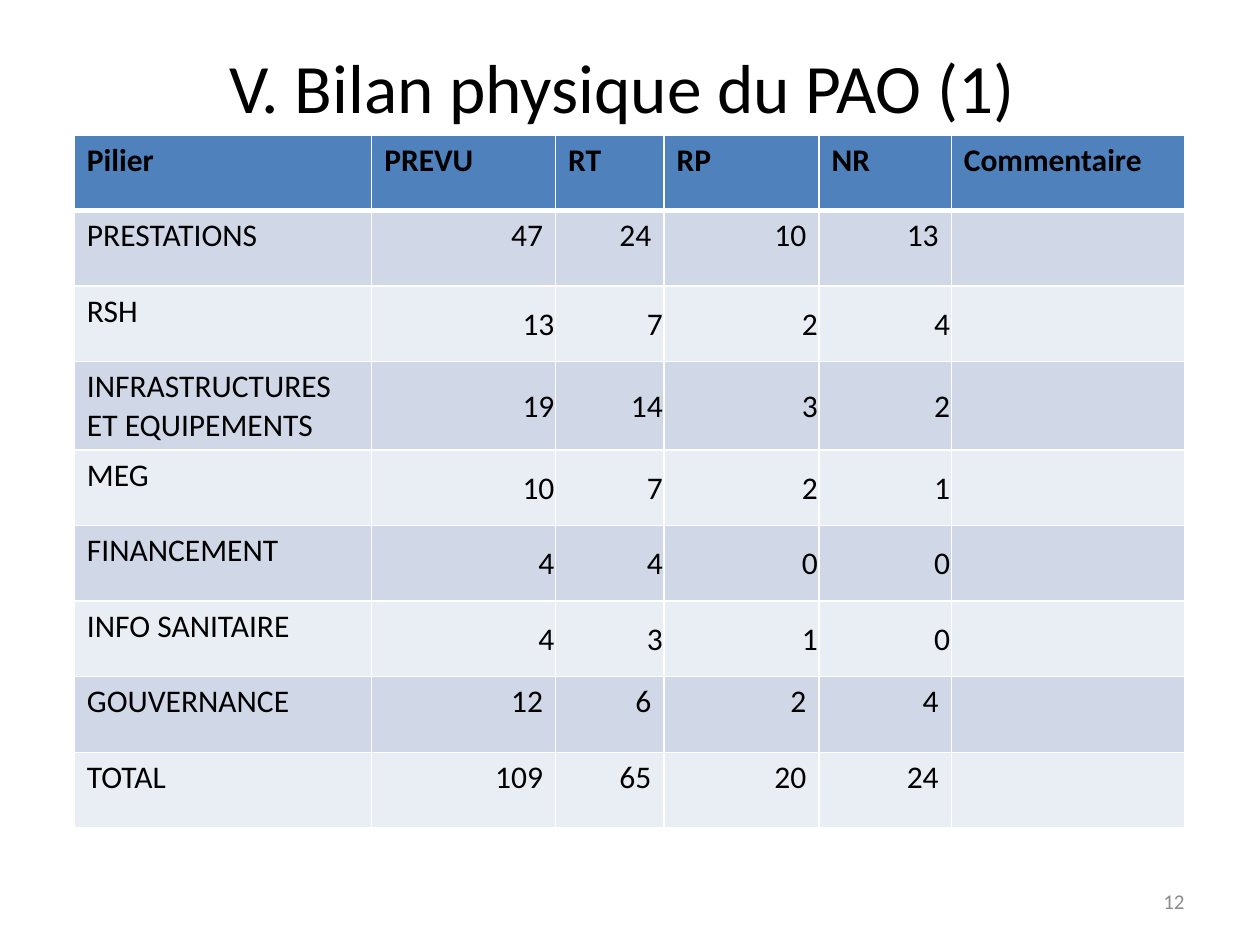
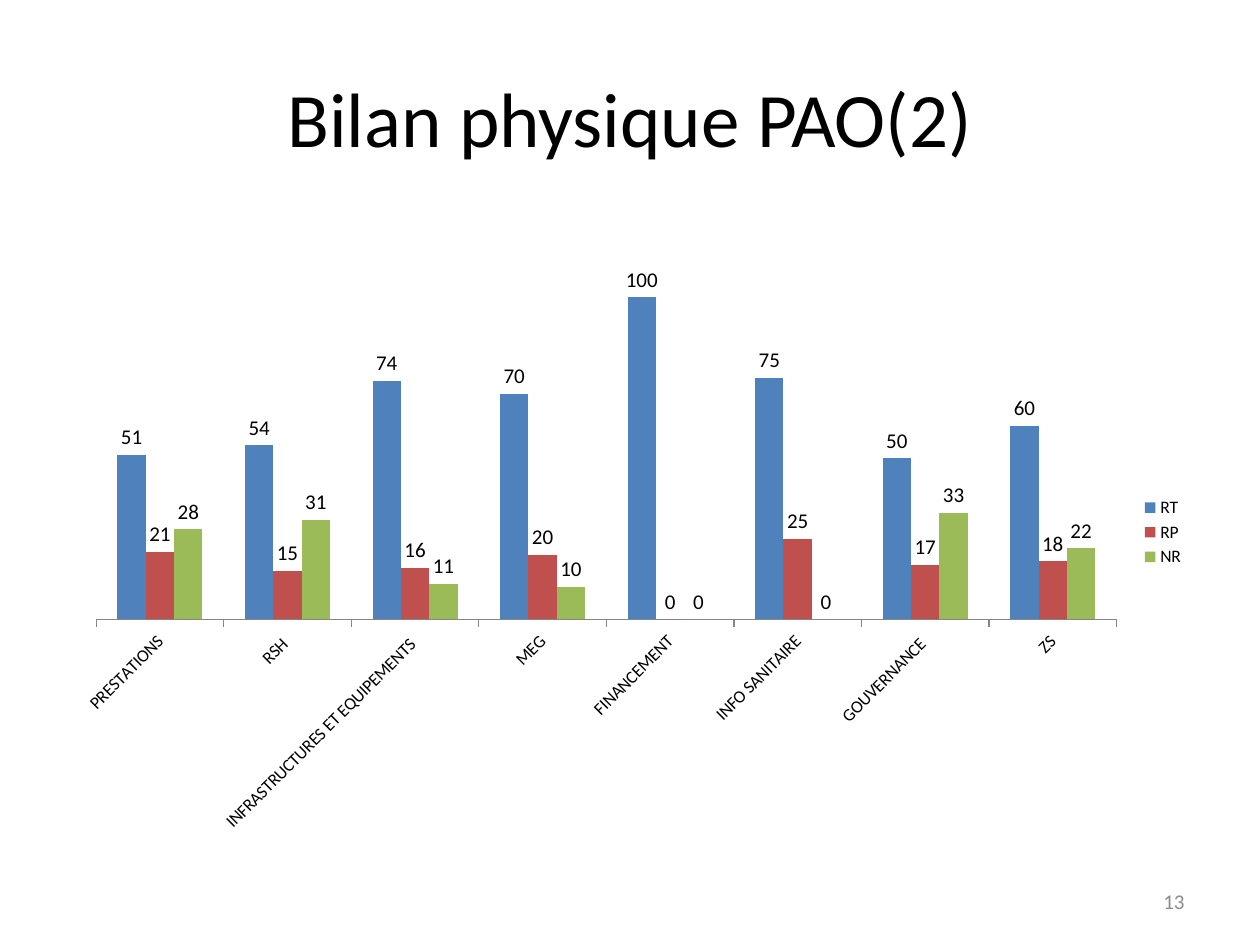
from dataclasses import dataclass

from lxml import etree
from pptx import Presentation
from pptx.chart.data import CategoryChartData
from pptx.dml.color import RGBColor
from pptx.enum.chart import (XL_CHART_TYPE, XL_LABEL_POSITION, XL_LEGEND_POSITION,
                             XL_TICK_MARK)
from pptx.enum.text import MSO_ANCHOR, PP_ALIGN
from pptx.oxml.ns import qn
from pptx.util import Inches, Pt

LEFT, CENTER, RIGHT = PP_ALIGN.LEFT, PP_ALIGN.CENTER, PP_ALIGN.RIGHT
TOP, MIDDLE = MSO_ANCHOR.TOP, MSO_ANCHOR.MIDDLE
COLUMNS = XL_CHART_TYPE.COLUMN_CLUSTERED
LABEL_ABOVE = XL_LABEL_POSITION.OUTSIDE_END
LEGEND_RIGHT = XL_LEGEND_POSITION.RIGHT
TICK_OUT = XL_TICK_MARK.OUTSIDE

FONT = "Calibri"
COLORS = {
    "text": "000000", "white": "FFFFFF", "number": "8C8C8C", "axis": "868686",
    "header": "4F81BD", "band_dark": "D0D8E8", "band_light": "E9EDF4",
    "RT": "4F81BD", "RP": "C0504D", "NR": "9BBB59",
}


@dataclass
class Pillar:
    name: str
    counts: tuple[int, int, int, int]
    tight: bool = True  # numbers set mid-height, close to the cell edge


@dataclass
class Series:
    name: str
    values: tuple[int, ...]


HEADERS = ("Pilier", "PREVU", "RT", "RP", "NR", "Commentaire")
COL_WIDTHS = (2.36, 1.46, 0.86, 1.23, 1.05, 1.85)
ROW_HEIGHT = 0.6
PILLARS = (
    Pillar("PRESTATIONS", (47, 24, 10, 13), tight=False),
    Pillar("RSH", (13, 7, 2, 4)),
    Pillar("INFRASTRUCTURES ET EQUIPEMENTS", (19, 14, 3, 2)),
    Pillar("MEG", (10, 7, 2, 1)),
    Pillar("FINANCEMENT", (4, 4, 0, 0)),
    Pillar("INFO SANITAIRE", (4, 3, 1, 0)),
    Pillar("GOUVERNANCE", (12, 6, 2, 4), tight=False),
    Pillar("TOTAL", (109, 65, 20, 24), tight=False),
)

CATEGORIES = ("PRESTATIONS", "RSH ", "INFRASTRUCTURES ET EQUIPEMENTS ", "MEG",
              "FINANCEMENT", "INFO SANITAIRE", "GOUVERNANCE ", "ZS")
SERIES = (
    Series("RT", (51, 54, 74, 70, 100, 75, 50, 60)),
    Series("RP", (21, 15, 16, 20, 0, 25, 17, 18)),
    Series("NR", (28, 31, 11, 10, 0, 0, 33, 22)),
)


def rgb(name: str) -> RGBColor:
    return RGBColor.from_string(COLORS[name])


def style_font(font, size: float, color: str = "text", bold: bool = False) -> None:
    font.name, font.size, font.bold = FONT, Pt(size), bold
    font.color.rgb = rgb(color)


def write(tf, text: str, *, size: float = 18, color: str = "text",
          bold: bool = False, align=LEFT) -> None:
    p = tf.paragraphs[0]
    p.alignment = align
    r = p.add_run()
    r.text = text
    style_font(r.font, size, color, bold)


def add_text(s, text: str, left: float, top: float, width: float, height: float,
             **fmt) -> None:
    box = s.shapes.add_textbox(Inches(left), Inches(top), Inches(width), Inches(height))
    tf = box.text_frame
    tf.word_wrap = True
    tf.vertical_anchor = MIDDLE
    write(tf, text, **fmt)


def add_slide(prs, title: str, number: int, title_height: float, title_size: float):
    """Blank slide with the shared title and page number."""
    s = prs.slides.add_slide(prs.slide_layouts[6])
    add_text(s, title, 0.5, 0.3, 9, title_height, size=title_size, align=CENTER)
    add_text(s, str(number), 7.17, 6.95, 2.33, 0.4, size=12, color="number", align=RIGHT)
    return s


def set_borders(cell, top: float, bottom: float) -> None:
    tc_pr = cell._tc.get_or_add_tcPr()
    sides = (("lnL", 1), ("lnR", 1), ("lnT", top), ("lnB", bottom))
    for i, (tag, width) in enumerate(sides):
        line = etree.Element(qn(f"a:{tag}"), w=str(Pt(width)))
        fill = etree.SubElement(line, qn("a:solidFill"))
        etree.SubElement(fill, qn("a:srgbClr"), val=COLORS["white"])
        tc_pr.insert(i, line)


def fill_cell(cell, text: str, fill: str, *, tight: bool = False,
              top: float = 1, bottom: float = 1, **fmt) -> None:
    cell.fill.solid()
    cell.fill.fore_color.rgb = rgb(fill)
    cell.vertical_anchor = MIDDLE if tight else TOP
    if tight:
        cell.margin_left = cell.margin_right = cell.margin_top = Inches(0.01)
        cell.margin_bottom = Inches(0)
    if text:
        write(cell.text_frame, text, **fmt)
    set_borders(cell, top, bottom)


def add_pillar_table(s) -> None:
    n_rows = len(PILLARS) + 1
    frame = s.shapes.add_table(n_rows, len(HEADERS), Inches(0.59), Inches(1.07),
                               Inches(sum(COL_WIDTHS)), Inches(n_rows * ROW_HEIGHT))
    table = frame.table
    table.horz_banding = False
    for col, width in zip(table.columns, COL_WIDTHS):
        col.width = Inches(width)
    for row in table.rows:
        row.height = Inches(ROW_HEIGHT)

    for c, header in enumerate(HEADERS):
        fill_cell(table.cell(0, c), header, "header", bottom=3, bold=True)
    for i, pillar in enumerate(PILLARS, start=1):
        band = "band_dark" if i % 2 else "band_light"
        top = 3 if i == 1 else 1
        fill_cell(table.cell(i, 0), pillar.name, band, top=top)
        for c, count in enumerate(pillar.counts, start=1):
            fill_cell(table.cell(i, c), str(count), band, top=top,
                      tight=pillar.tight, align=RIGHT)
        fill_cell(table.cell(i, len(HEADERS) - 1), "", band, top=top)


def add_rate_chart(s) -> None:
    data = CategoryChartData(number_format="0")
    data.categories = CATEGORIES
    for series in SERIES:
        data.add_series(series.name, series.values)
    chart = s.shapes.add_chart(COLUMNS, Inches(0.5), Inches(1.75), Inches(9),
                               Inches(4.95), data).chart
    style_font(chart.font, 10)
    chart.has_title = False
    chart.has_legend = True
    chart.legend.position = LEGEND_RIGHT
    chart.legend.include_in_layout = False

    # Axes
    chart.category_axis.major_tick_mark = TICK_OUT
    chart.category_axis.format.line.color.rgb = rgb("axis")
    axis = chart.value_axis
    axis.visible = False
    axis.has_major_gridlines = False
    axis.minimum_scale, axis.maximum_scale = 0, 120

    # Columns and their labels
    plot = chart.plots[0]
    plot.gap_width, plot.overlap = 150, 0
    plot.vary_by_categories = False
    for series in plot.series:
        series.format.fill.solid()
        series.format.fill.fore_color.rgb = rgb(series.name)
        series.invert_if_negative = False
        labels = series.data_labels
        labels.show_value = True
        labels.position = LABEL_ABOVE
        labels.number_format, labels.number_format_is_linked = "0", False
        style_font(labels.font, 12)


def main() -> None:
    prs = Presentation()
    prs.slide_width, prs.slide_height = Inches(10), Inches(7.5)

    # Table of activities by pillar
    s = add_slide(prs, "V. Bilan physique du PAO (1) ", 12, 0.77, 39.6)
    add_pillar_table(s)

    # Chart of completion rates
    s = add_slide(prs, "Bilan physique PAO(2)", 13, 1.25, 44)
    add_rate_chart(s)

    prs.save("out.pptx")


if __name__ == "__main__":
    main()
